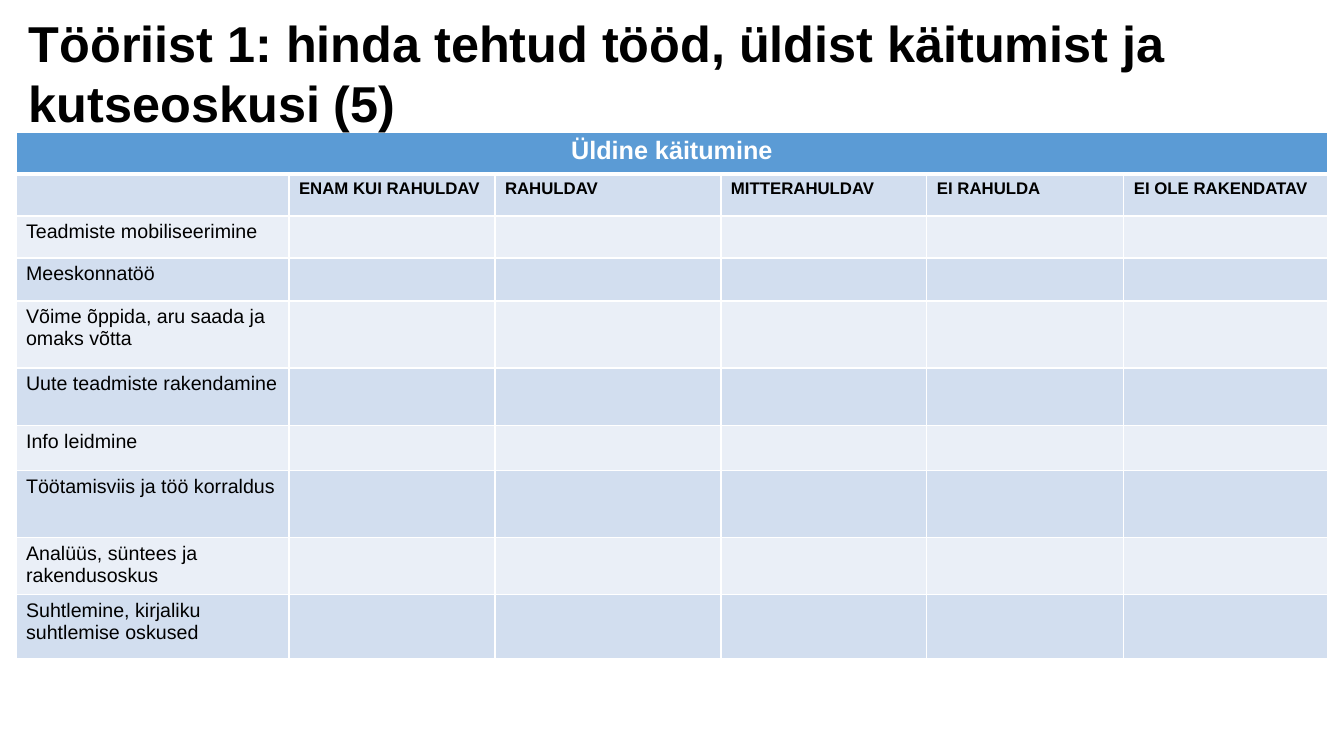
from dataclasses import dataclass

from lxml.etree import SubElement
from pptx import Presentation
from pptx.dml.color import RGBColor
from pptx.enum.text import MSO_ANCHOR as Anchor, PP_ALIGN as Align
from pptx.oxml.ns import qn
from pptx.util import Pt

SLIDE_WIDTH, SLIDE_HEIGHT = 1344, 756
EMU_PER_PX = 12192000 / SLIDE_WIDTH


@dataclass(frozen=True)
class Theme:
    font: str = "Arial"
    ink: str = "000000"
    white: str = "FFFFFF"
    banner: str = "5B9BD5"
    bands: tuple = ("D2DEEF", "EAEFF7")
    title_size: int = 36
    banner_size: int = 18
    heading_size: int = 12
    body_size: int = 14
    thin: int = 1
    thick: int = 3


def emu(px):
    return round(px * EMU_PER_PX)


class SlideBuilder:
    def __init__(self, slide, theme):
        self.slide = slide
        self.theme = theme

    def format_text(self, frame, size, color, bold=False, align=Align.LEFT):
        for para in frame.paragraphs:
            para.alignment = align
            para.font.size = Pt(size)
            for span in para.runs:
                span.font.name = self.theme.font
                span.font.size = Pt(size)
                span.font.bold = bold
                span.font.color.rgb = RGBColor.from_string(color)

    def title(self, text, left, top, width, height):
        box = self.slide.shapes.add_textbox(*map(emu, (left, top, width, height)))
        frame = box.text_frame
        frame.word_wrap = True
        frame.vertical_anchor = Anchor.BOTTOM
        frame.text = text
        self.format_text(frame, self.theme.title_size, self.theme.ink, bold=True)

    def cell_borders(self, cell, bottom, top):
        """Draw white borders; they must come before the fill in the cell XML."""
        properties = cell._tc.get_or_add_tcPr()
        widths = {"a:lnL": self.theme.thin, "a:lnR": self.theme.thin, "a:lnT": top, "a:lnB": bottom}
        for tag, width in widths.items():
            line = SubElement(properties, qn(tag), w=str(Pt(width)))
            fill = SubElement(line, qn("a:solidFill"))
            SubElement(fill, qn("a:srgbClr"), val=self.theme.white)

    def cell(self, cell, text, row, column):
        theme = self.theme
        bottom = theme.thick if row == 0 else theme.thin
        top = theme.thick if row == 1 else theme.thin
        self.cell_borders(cell, bottom, top)
        cell.fill.solid()
        color = theme.banner if row == 0 else theme.bands[(row - 1) % 2]
        cell.fill.fore_color.rgb = RGBColor.from_string(color)
        cell.text = text
        if row == 0:
            self.format_text(cell.text_frame, theme.banner_size, theme.white, True, Align.CENTER)
        elif row == 1:
            self.format_text(cell.text_frame, theme.heading_size, theme.ink, bold=True)
        else:
            self.format_text(cell.text_frame, theme.body_size, theme.ink)

    def rating_table(self, banner, headings, criteria, left, top, widths, heights):
        table = self.slide.shapes.add_table(
            len(heights), len(widths), emu(left), emu(top), emu(sum(widths)), emu(sum(heights))
        ).table
        for column, width in zip(table.columns, widths):
            column.width = emu(width)
        for row, height in zip(table.rows, heights):
            row.height = emu(height)
        blanks = [""] * (len(widths) - 1)
        texts = [[banner, *blanks], ["", *headings]]
        texts += [[criterion, *blanks] for criterion in criteria]
        for row, row_texts in enumerate(texts):
            for column, text in enumerate(row_texts):
                self.cell(table.cell(row, column), text, row, column)
        table.cell(0, 0).merge(table.cell(0, len(widths) - 1))


RATINGS = ["ENAM KUI RAHULDAV", "RAHULDAV", "MITTERAHULDAV", "EI RAHULDA", "EI OLE RAKENDATAV"]
CRITERIA = [
    "Teadmiste mobiliseerimine",
    "Meeskonnatöö",
    "Võime õppida, aru saada ja omaks võtta",
    "Uute teadmiste rakendamine",
    "Info leidmine",
    "Töötamisviis ja töö korraldus",
    "Analüüs, süntees ja rakendusoskus",
    "Suhtlemine, kirjaliku suhtlemise oskused",
]


def main():
    deck = Presentation()
    deck.slide_width, deck.slide_height = emu(SLIDE_WIDTH), emu(SLIDE_HEIGHT)
    page = SlideBuilder(deck.slides.add_slide(deck.slide_layouts[6]), Theme())
    page.rating_table(
        "Üldine käitumine", RATINGS, CRITERIA, left=16, top=132,
        widths=[273, 206, 226, 206, 197, 204],
        heights=[42, 42, 42, 43, 67, 58, 45, 67, 57, 64],
    )
    page.title(
        "Tööriist 1: hinda tehtud tööd, üldist käitumist ja kutseoskusi (5)",
        left=19, top=6, width=1241, height=132,
    )
    deck.save("out.pptx")


if __name__ == "__main__":
    main()
